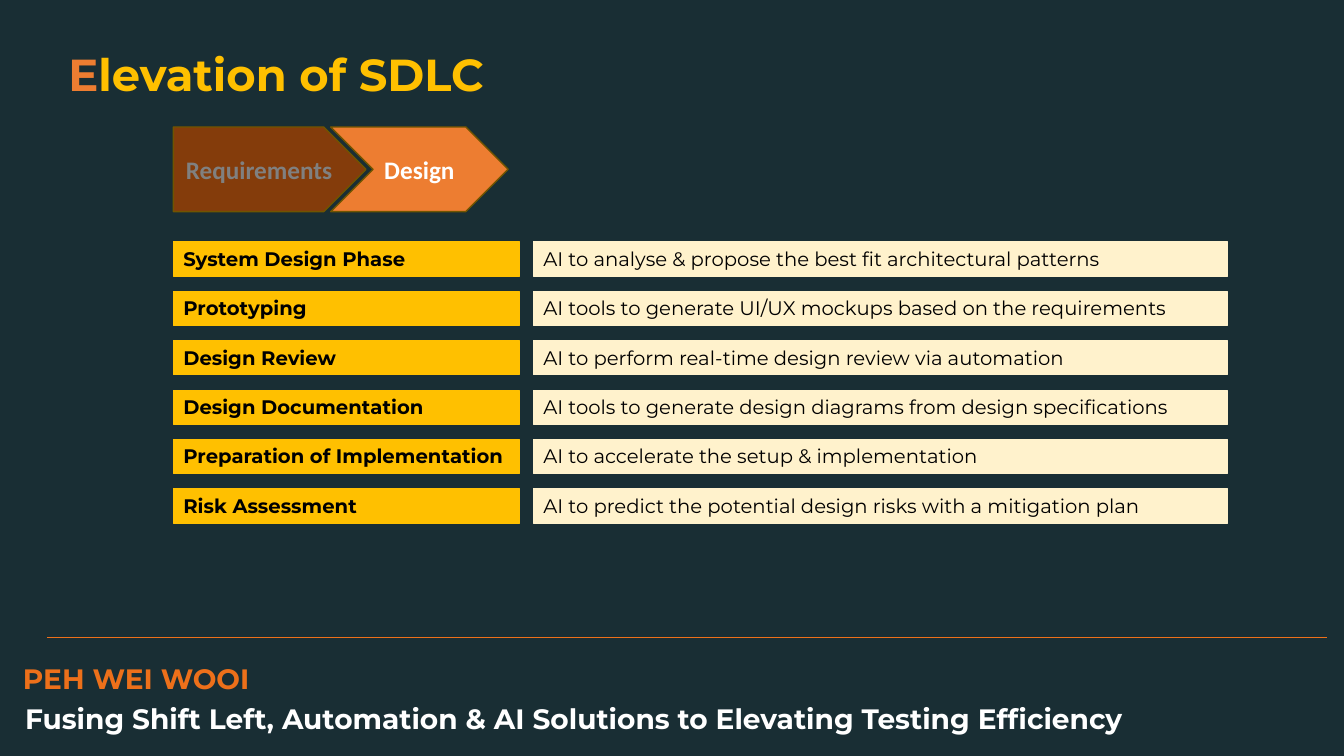
from pptx import Presentation
from pptx.dml.color import RGBColor
from pptx.enum.shapes import MSO_CONNECTOR, MSO_SHAPE
from pptx.enum.text import MSO_ANCHOR, PP_ALIGN
from pptx.oxml.ns import qn
from pptx.util import Inches, Pt
from lxml import etree

RECT, PENTAGON, CHEVRON = MSO_SHAPE.RECTANGLE, MSO_SHAPE.PENTAGON, MSO_SHAPE.CHEVRON
STRAIGHT = MSO_CONNECTOR.STRAIGHT
TOP, MIDDLE = MSO_ANCHOR.TOP, MSO_ANCHOR.MIDDLE
LEFT, CENTER = PP_ALIGN.LEFT, PP_ALIGN.CENTER
NIGHT, AMBER, CREAM, ORANGE = "192E34", "FFC000", "FFF2CC", "ED7D31"
FOOTER_ORANGE, WHITE, BLACK = "ED701A", "FFFFFF", "000000"


def color(value):
    return RGBColor.from_string(value)


def add_text(runs, left, top, width, height, shape=None, fill=None, line=None,
             line_width=1, size=14, font="Montserrat", bold=True,
             align=LEFT, anchor=TOP, spacing=None):
    """Add a text box, or a filled shape if one is given; runs are (text, colour)."""
    place = [Inches(n) for n in (left, top, width, height)]
    if shape is None:
        box = slide.shapes.add_textbox(*place)
    else:
        box = slide.shapes.add_shape(shape, *place)
        box.shadow.inherit = False
        box.fill.solid()
        box.fill.fore_color.rgb = color(fill)
        box.line.color.rgb = color(line)
        box.line.width = Pt(line_width)
    frame = box.text_frame
    frame.word_wrap = True
    frame.vertical_anchor = anchor
    paragraph = frame.paragraphs[0]
    paragraph.alignment = align
    paragraph.line_spacing = spacing
    for text, text_color in runs:
        run = paragraph.add_run()
        run.text = text
        run.font.name = font
        run.font.size = Pt(size)
        run.font.bold = bold
        run.font.color.rgb = color(text_color)


deck = Presentation()
deck.slide_width, deck.slide_height = Inches(13.33), Inches(7.5)
slide = deck.slides.add_slide(deck.slide_layouts[6])
slide.background.fill.solid()
slide.background.fill.fore_color.rgb = color(NIGHT)

# Title
add_text([("E", ORANGE), ("levation of SDLC", AMBER)], 0.58, 0.41, 12.47, 0.64, size=32)

# Life-cycle steps
steps = [
    ("Design", CHEVRON, 3.28, 1.76, ORANGE, WHITE),
    ("Requirements", PENTAGON, 1.72, 1.91, "843C0B", "808080"),
]
for step, outline, left, width, fill, text_color in steps:
    add_text([(step, text_color)], left, 1.26, width, 0.84, shape=outline, fill=fill,
             line="705400", size=18, font="Calibri", align=CENTER, anchor=MIDDLE)

# Design activities and what AI does in each
activities = [
    ("System Design Phase", "AI to analyse & propose the best fit architectural patterns"),
    ("Prototyping", "AI tools to generate UI/UX mockups based on the requirements"),
    ("Design Review", "AI to perform real-time design review via automation"),
    ("Design Documentation", "AI tools to generate design diagrams from design specifications"),
    ("Preparation of Implementation", "AI to accelerate the setup & implementation"),
    ("Risk Assessment", "AI to predict the potential design risks with a mitigation plan"),
]
for row, (activity, ai_role) in enumerate(activities):
    top = 2.4 + 0.49 * row
    for text, left, width, fill, bold in (
        (activity, 1.72, 3.43, AMBER, True),
        (ai_role, 5.29, 6.88, CREAM, False),
    ):
        add_text([(text, BLACK)], left, top, width, 0.34, shape=RECT,
                 fill=fill, line=fill, line_width=0.75, bold=bold)

# Footer
rule = slide.shapes.add_connector(STRAIGHT, Inches(0.47), Inches(6.32), Inches(13.16), Inches(6.32))
rule.line.color.rgb = color(FOOTER_ORANGE)
rule.line.width = Pt(0.5)
etree.SubElement(rule._element.spPr, qn("a:effectLst"))
add_text([("PEH WEI WOOI", FOOTER_ORANGE)], 0.13, 6.55, 4.76, 0.35, size=20, spacing=0.9)
add_text([("Fusing Shift Left, Automation & AI Solutions to Elevating Testing Efficiency", WHITE)],
         0.15, 6.95, 11.34, 0.24, size=20, spacing=0.9)

deck.save("out.pptx")
